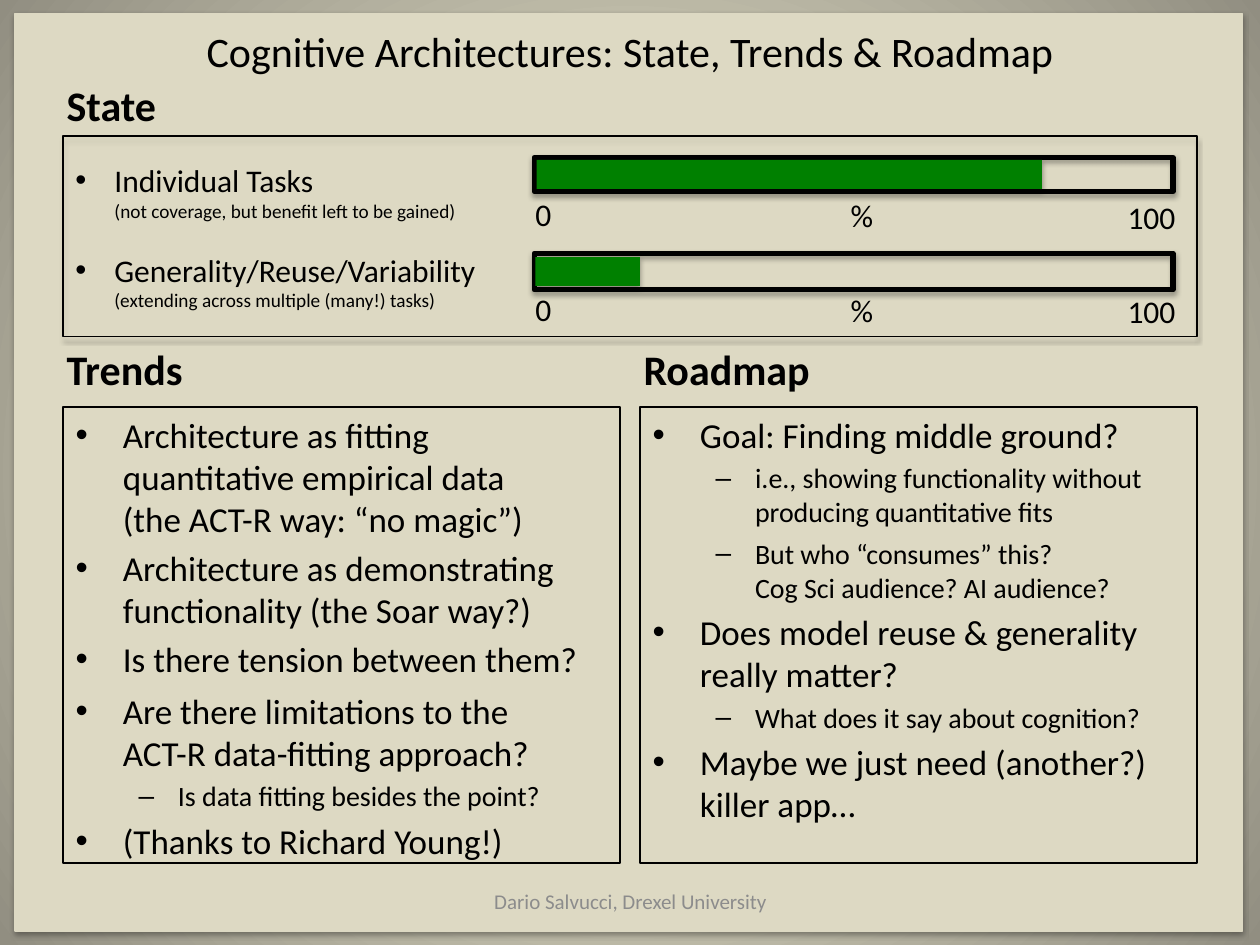
import pptx
import pptx.util
import pptx.dml.color
import pptx.enum.shapes
import pptx.enum.text
import pptx.oxml
import pptx.oxml.ns
import lxml.etree

Inches, Pt = pptx.util.Inches, pptx.util.Pt
PP_ALIGN = pptx.enum.text.PP_ALIGN
ANCHOR = pptx.enum.text.MSO_ANCHOR
AUTO_SIZE = pptx.enum.text.MSO_AUTO_SIZE
qn = pptx.oxml.ns.qn

BLACK, PAGE, GREEN, GRAY = "000000", "DDD9C3", "008000", "8C8C8C"
TITLE = "Cognitive Architectures: State, Trends & Roadmap"
FOOTER = "Dario Salvucci, Drexel University"
HEADINGS = [("State", 0.43, 0.58), ("Trends", 0.43, 2.68), ("Roadmap", 5.01, 2.68)]

# name, note, text top and width, frame top and height, fill left, top and width
GAUGES = [
    ("Individual Tasks", "(not coverage, but benefit left to be gained)",
     (1.23, 3.51), (1.25, 0.27), (4.26, 1.27, 4.01)),
    ("Generality/Reuse/Variability", "(extending across multiple (many!) tasks)",
     (1.94, 3.64), (2.01, 0.29), (4.25, 2.04, 0.83)),
]
# text, left, drop below the top of the row, width, alignment
SCALE = [
    ("0", 4.15, 0, 0.56, PP_ALIGN.LEFT),
    ("%", 6.56, 0.01, 0.56, PP_ALIGN.CENTER),
    ("100", 8.85, 0.02, 0.72, PP_ALIGN.LEFT),
]
SCALE_TOP, SCALE_STEP = 1.5, 0.75

# level, text
TRENDS = [
    (0, "Architecture as fitting quantitative empirical data\n"
        "(the ACT-R way: “no magic”)"),
    (0, "Architecture as demonstrating functionality (the Soar way?)"),
    (0, "Is there tension between them?"),
    (0, "Are there limitations to the\nACT-R data-fitting approach?"),
    (1, "Is data fitting besides the point?"),
    (0, "(Thanks to Richard Young!)"),
]
ROADMAP = [
    (0, "Goal: Finding middle ground?"),
    (1, "i.e., showing functionality without producing quantitative fits"),
    (1, "But who “consumes” this?\nCog Sci audience? AI audience?"),
    (0, "Does model reuse & generality really matter?"),
    (1, "What does it say about cognition?"),
    (0, "Maybe we just need (another?) killer app…"),
]
LEVEL_SIZES = [20, 16]


def rgb(value):
    return pptx.dml.color.RGBColor.from_string(value)


def place(sp, left, top, width, height):
    sp.left, sp.top = Inches(left), Inches(top)
    sp.width, sp.height = Inches(width), Inches(height)


def add_text(p, text, size, color=BLACK, bold=False):
    """Add one run per line of text, with line breaks between them."""
    for i, line in enumerate(text.split("\n")):
        if i:
            p.add_line_break()
        r = p.add_run()
        r.text = line
        r.font.name, r.font.size, r.font.bold = "Calibri", Pt(size), bold
        r.font.color.rgb = rgb(color)


def add_box(s, at, text, size, color=BLACK, bold=False, align=PP_ALIGN.LEFT):
    sp = s.shapes.add_textbox(*map(Inches, at))
    sp.text_frame.word_wrap = True
    p = sp.text_frame.paragraphs[0]
    p.alignment = align
    add_text(p, text, size, color, bold)
    return sp


def add_rect(s, at, fill=None, line=None, width=0.75):
    """Add a rectangle with the soft shadow shared by all panels and bars."""
    sp = s.shapes.add_shape(pptx.enum.shapes.MSO_SHAPE.RECTANGLE, *map(Inches, at))
    if fill:
        sp.fill.solid()
        sp.fill.fore_color.rgb = rgb(fill)
    else:
        sp.fill.background()
    if line:
        sp.line.color.rgb = rgb(line)
        sp.line.width = Pt(width)
    else:
        sp.line.fill.background()
    sp.shadow.inherit = False
    effects = sp._element.spPr.find(qn("a:effectLst"))
    shadow = lxml.etree.SubElement(
        effects, qn("a:outerShdw"), blurRad=str(Pt(3.1)), dist=str(Pt(1.8)),
        dir="5400000", rotWithShape="0")
    color = lxml.etree.SubElement(shadow, qn("a:srgbClr"), val=BLACK)
    lxml.etree.SubElement(color, qn("a:alpha"), val="35000")
    return sp


def set_background(s, inner, outer):
    """Fill the background with a gradient that runs out from the centre."""
    fill = s.background.fill
    fill.gradient()
    for stop, color, position in zip(fill.gradient_stops, (inner, outer), (0, 1)):
        stop.color.rgb = rgb(color)
        stop.position = position
    grad = s._element.cSld.find(".//" + qn("a:gradFill"))
    grad.remove(grad.find(qn("a:lin")))
    path = lxml.etree.Element(qn("a:path"), path="circle")
    lxml.etree.SubElement(path, qn("a:fillToRect"), l="50000", t="50000", r="50000", b="50000")
    grad.find(qn("a:gsLst")).addnext(path)


def fill_list(sp, left, items):
    place(sp, left, 3.23, 4.42, 3.62)
    sp.line.color.rgb = rgb(BLACK)
    sp.line.width = Pt(0.75)
    tf = sp.text_frame
    tf.auto_size = AUTO_SIZE.NONE
    for i, (level, text) in enumerate(items):
        p = tf.add_paragraph() if i else tf.paragraphs[0]
        p.level = level
        add_text(p, text, LEVEL_SIZES[level])


def add_gauge_label(s, at, name, note):
    p = add_box(s, at, name, 18).text_frame.paragraphs[0]
    p.add_line_break()
    add_text(p, note, 11)
    pPr = p._p.get_or_add_pPr()
    pPr.set("marL", str(Inches(0.31)))
    pPr.set("indent", str(Inches(-0.31)))
    lxml.etree.SubElement(pPr, qn("a:buFont"), typeface="Arial")
    lxml.etree.SubElement(pPr, qn("a:buChar"), char="•")


def main():
    prs = pptx.Presentation()
    prs.slide_width, prs.slide_height = Inches(10), Inches(7.5)
    s = prs.slides.add_slide(prs.slide_layouts[3])
    set_background(s, "FCF7DD", "918E81")

    page = add_rect(s, (0.12, 0.11, 9.74, 7.28), PAGE, PAGE)
    s.shapes._spTree.insert(2, page._element)  # behind the placeholders

    title = s.shapes.title
    place(title, 0.5, 0.15, 9, 0.34)
    title.text_frame.auto_size = AUTO_SIZE.NONE
    title.text_frame.vertical_anchor = ANCHOR.TOP
    add_text(title.text_frame.paragraphs[0], TITLE, 24)

    for text, left, top in HEADINGS:
        add_box(s, (left, top, 4.42, 0.5), text, 24, bold=True)

    add_rect(s, (0.5, 1.08, 9, 1.59), line=BLACK)
    for i, (name, note, label, frame, bar) in enumerate(GAUGES):
        add_rect(s, (4.24, frame[0], 5.07, frame[1]), line=BLACK, width=3)
        add_rect(s, (*bar, 0.23), GREEN)
        add_gauge_label(s, (0.5, *label, 0.59), name, note)
        for text, left, drop, width, align in SCALE:
            top = SCALE_TOP + i * SCALE_STEP + drop
            add_box(s, (left, top, width, 0.4), text, 18, align=align)

    fill_list(s.placeholders[1], 0.5, TRENDS)
    fill_list(s.placeholders[2], 5.08, ROADMAP)

    footer = add_box(s, (3.42, 6.95, 3.17, 0.4), FOOTER, 12, GRAY, align=PP_ALIGN.CENTER)
    footer.text_frame.vertical_anchor = ANCHOR.MIDDLE
    prs.save("out.pptx")


if __name__ == "__main__":
    main()
